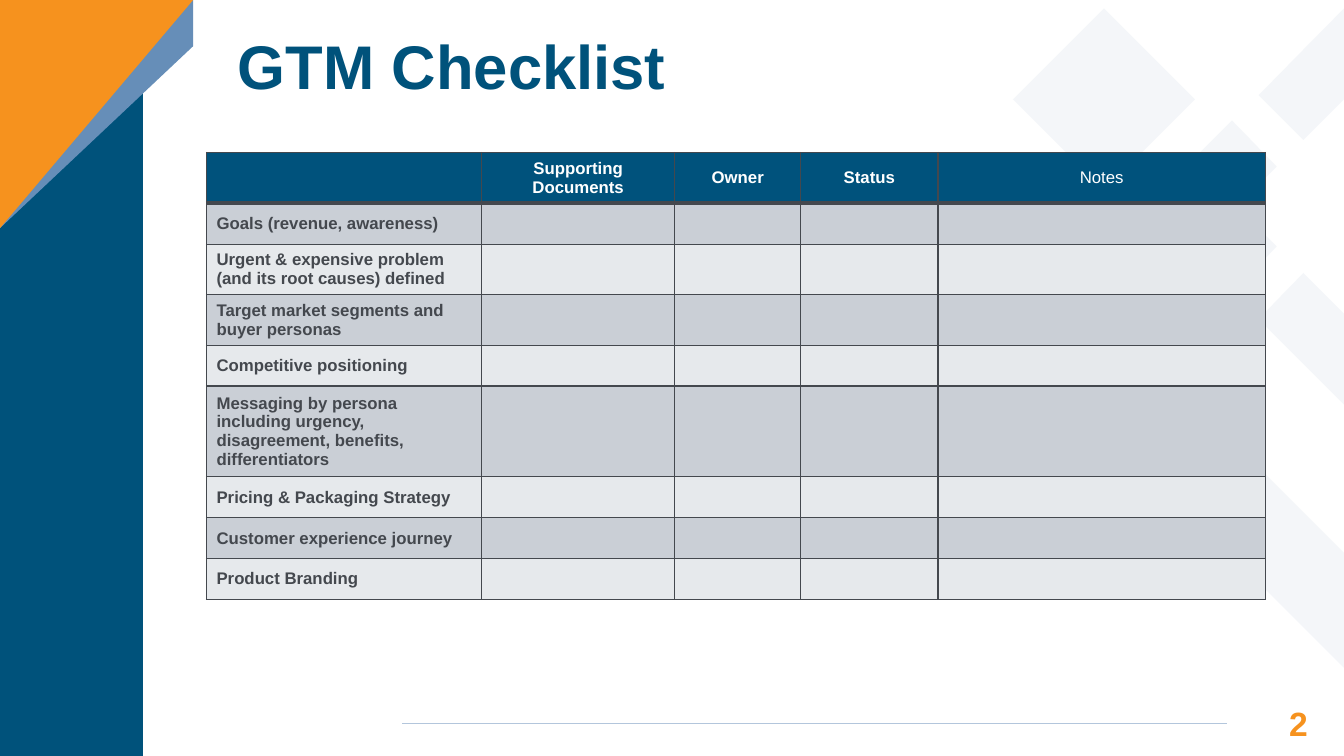
from lxml import etree
from pptx import Presentation
from pptx.dml.color import RGBColor
from pptx.enum.shapes import MSO_CONNECTOR, MSO_SHAPE
from pptx.enum.text import MSO_ANCHOR, PP_ALIGN
from pptx.oxml.ns import qn
from pptx.util import Pt

# Content
TITLE = "GTM Checklist"
PAGE_NUMBER = "2"
HEADERS = ["", "Supporting Documents", "Owner", "Status", "Notes"]
CHECKLIST = [  # item, row height
    ("Goals (revenue, awareness)", 29.2),
    ("Urgent & expensive problem (and its root causes) defined", 36.1),
    ("Target market segments and buyer personas", 36.1),
    ("Competitive positioning", 29.2),
    ("Messaging by persona including urgency, disagreement, benefits, differentiators", 64.8),
    ("Pricing & Packaging Strategy", 29.2),
    ("Customer experience journey", 29.2),
    ("Product Branding", 29.2),
]
HEADER_HEIGHT = 36.2
COLUMN_WIDTHS = [196.5, 138, 90, 98, 234]
TABLE_LEFT, TABLE_TOP = 147.5, 109

# Style
FONT = "Arial"
BLUE, ORANGE, STEEL, PALE = "00527B", "F6921E", "668EB8", "E9EEF4"
GREY, WHITE = "44484E", "FFFFFF"
ROW_FILLS = ["CACFD6", "E6E9EC"]

# Outlines in points
PALE_BANDS = [
    [(880, 86), (818, 148), (880, 210), (912, 176), (883, 148), (912, 119)],
    [(792, 173), (724, 241), (960, 477), (960, 395), (806, 241), (833, 214)],
    [(931, 195), (899, 228), (960, 289), (960, 224)],
    [(960, 6), (899, 68), (931, 100), (960, 71)],
]
CORNER_SHAPES = [
    ([(0, 0), (101.5, 0), (101.5, 540), (0, 540)], BLUE),
    ([(137.5, 0), (0, 0), (0, 162.7), (137.5, 33)], STEEL),
    ([(137.5, 0), (0, 0), (0, 162.7)], ORANGE),
]


def color(hex_string):
    return RGBColor.from_string(hex_string)


def paint(shape, fill, opacity=100):
    shape.shadow.inherit = False
    shape.fill.solid()
    shape.fill.fore_color.rgb = color(fill)
    shape.line.fill.background()
    if opacity < 100:
        tint = shape._element.spPr.find(qn("a:solidFill"))[0]
        etree.SubElement(tint, qn("a:alpha"), val=str(opacity * 1000))


def add_outline(slide, points, fill, opacity=100):
    builder = slide.shapes.build_freeform(*points[0], scale=Pt(1))
    builder.add_line_segments(points[1:], close=True)
    paint(builder.convert_to_shape(), fill, opacity)


def style_text(paragraph, size, font_color, bold=True, align=PP_ALIGN.LEFT):
    paragraph.alignment = align
    font = paragraph.font
    font.name, font.size, font.bold = FONT, Pt(size), bold
    font.color.rgb = color(font_color)


def set_borders(cell, bottom_width):
    properties = cell._tc.get_or_add_tcPr()
    for side, width in (("L", 1), ("R", 1), ("T", 1), ("B", bottom_width)):
        line = etree.SubElement(properties, qn(f"a:ln{side}"), w=str(Pt(width)))
        fill = etree.SubElement(line, qn("a:solidFill"))
        etree.SubElement(fill, qn("a:srgbClr"), val=GREY)


def fill_cell(cell, text, fill, font_color, bold, align, bottom_width=1):
    set_borders(cell, bottom_width)
    cell.fill.solid()
    cell.fill.fore_color.rgb = color(fill)
    cell.vertical_anchor = MSO_ANCHOR.MIDDLE
    cell.text = text
    style_text(cell.text_frame.paragraphs[0], 12, font_color, bold, align)


def clear_margins(text_frame):
    text_frame.margin_left = text_frame.margin_right = 0
    text_frame.margin_top = text_frame.margin_bottom = 0
    text_frame.word_wrap = True


def add_background(slide):
    for band in PALE_BANDS:
        add_outline(slide, band, PALE, 49)
    diamond = slide.shapes.add_shape(MSO_SHAPE.DIAMOND, Pt(723.6), Pt(6), Pt(130), Pt(130))
    paint(diamond, PALE, 49)
    for points, fill in CORNER_SHAPES:
        add_outline(slide, points, fill)


def add_footer(slide):
    rule = slide.shapes.add_connector(
        MSO_CONNECTOR.STRAIGHT, Pt(287.5), Pt(516.7), Pt(876.6), Pt(516.7))
    rule.line.color.rgb = color("B3C6DC")
    rule.line.width = Pt(0.82)
    etree.SubElement(rule._element.spPr, qn("a:effectLst"))

    number = slide.shapes.add_textbox(Pt(876.6), Pt(496.8), Pt(57.6), Pt(27.4))
    clear_margins(number.text_frame)
    number.text_frame.text = PAGE_NUMBER
    paragraph = number.text_frame.paragraphs[0]
    paragraph.line_spacing = 1.19
    style_text(paragraph, 24, ORANGE, align=PP_ALIGN.RIGHT)


def add_checklist(slide):
    heights = [HEADER_HEIGHT] + [height for _, height in CHECKLIST]
    table = slide.shapes.add_table(
        len(heights), len(HEADERS), Pt(TABLE_LEFT), Pt(TABLE_TOP),
        Pt(sum(COLUMN_WIDTHS)), Pt(sum(heights))).table
    for column, width in zip(table.columns, COLUMN_WIDTHS):
        column.width = Pt(width)
    for row, height in zip(table.rows, heights):
        row.height = Pt(height)

    for index, header in enumerate(HEADERS):
        fill_cell(table.cell(0, index), header, "00527C", WHITE,
                  header != "Notes", PP_ALIGN.CENTER, bottom_width=3)
    for row_index, (item, _) in enumerate(CHECKLIST):
        for index in range(len(HEADERS)):
            fill_cell(table.cell(row_index + 1, index), "" if index else item,
                      ROW_FILLS[row_index % 2], GREY, True, PP_ALIGN.LEFT)


def add_title(slide):
    title = slide.shapes.title
    title.left, title.top, title.width, title.height = Pt(170), Pt(25.2), Pt(690), Pt(49)
    clear_margins(title.text_frame)
    title.text_frame.vertical_anchor = MSO_ANCHOR.MIDDLE
    title.text_frame.text = TITLE
    paragraph = title.text_frame.paragraphs[0]
    paragraph.line_spacing = 0.9
    style_text(paragraph, 44, BLUE)


def main():
    presentation = Presentation()
    presentation.slide_width, presentation.slide_height = Pt(960), Pt(540)
    slide = presentation.slides.add_slide(presentation.slide_layouts[5])
    add_background(slide)
    add_footer(slide)
    add_checklist(slide)
    add_title(slide)
    presentation.save("out.pptx")


if __name__ == "__main__":
    main()
